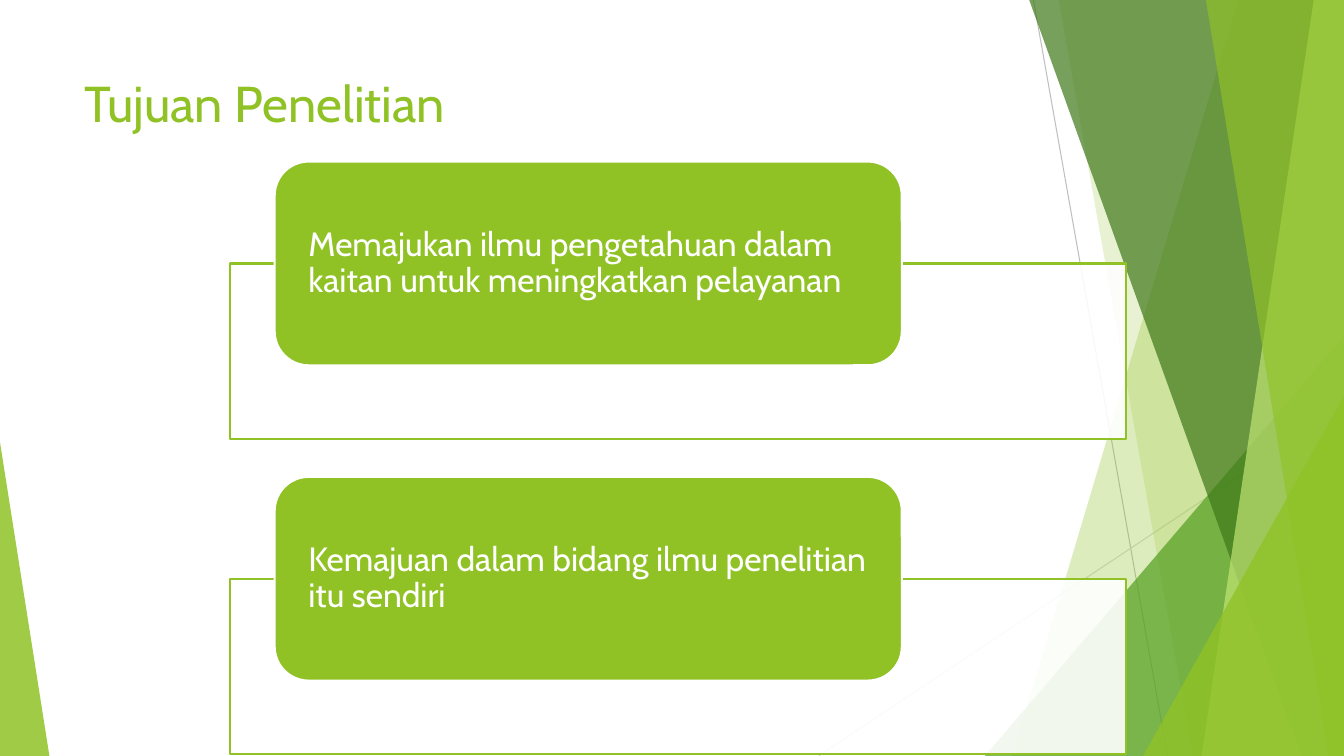
import dataclasses

import lxml.etree
import pptx
import pptx.dml.color
import pptx.enum.shapes
import pptx.enum.text
import pptx.oxml.ns
import pptx.util

Pt = pptx.util.Pt
SHAPES = pptx.enum.shapes.MSO_SHAPE
ANCHOR = pptx.enum.text.MSO_ANCHOR
ALIGN = pptx.enum.text.PP_ALIGN


@dataclasses.dataclass(frozen=True)
class Theme:
    font: str = "Cabin"
    title_size: float = 36
    goal_size: float = 24
    lime: str = "90C226"
    green: str = "54A021"
    forest: str = "3F7819"
    pale: str = "C0E474"
    white: str = "FFFFFF"
    ray: str = "BFBFBF"
    faint_ray: str = "D9D9D9"


@dataclasses.dataclass(frozen=True)
class Box:
    left: float
    top: float
    width: float
    height: float

    @property
    def right(self):
        return self.left + self.width

    @property
    def bottom(self):
        return self.top + self.height


THEME = Theme()


def rgb(color):
    return pptx.dml.color.RGBColor.from_string(color)


def apply(target, values):
    for name, value in values.items():
        setattr(target, name, value)


def place(shape, box):
    apply(shape, {name: Pt(value) for name, value in dataclasses.asdict(box).items()})


def paint(shape, fill, opacity=100, line=None):
    shape.shadow.inherit = False
    shape.fill.solid()
    shape.fill.fore_color.rgb = rgb(fill)
    if opacity < 100:
        tint = shape.element.spPr.find(".//" + pptx.oxml.ns.qn("a:srgbClr"))
        alpha = lxml.etree.SubElement(tint, pptx.oxml.ns.qn("a:alpha"))
        alpha.set("val", str(opacity * 1000))
    if line:
        shape.line.color.rgb = rgb(line)
        shape.line.width = Pt(1.5)
    else:
        shape.line.fill.background()


def add_block(page, kind, box, **look):
    block = page.shapes.add_shape(
        kind, Pt(box.left), Pt(box.top), Pt(box.width), Pt(box.height))
    paint(block, **look)
    return block


def write(frame, text, size, color, frame_format, para_format):
    apply(frame, {"word_wrap": True, **frame_format})
    para = frame.paragraphs[0]
    apply(para, {"alignment": ALIGN.LEFT, **para_format})
    span = para.add_run()
    span.text = text
    apply(span.font, {"name": THEME.font, "size": Pt(size)})
    span.font.color.rgb = rgb(color)


def add_ray(page, start, end, color):
    ray = page.shapes.add_connector(
        pptx.enum.shapes.MSO_CONNECTOR.STRAIGHT, *map(Pt, start + end))
    ray.line.color.rgb = rgb(color)
    ray.line.width = Pt(0.75)
    lxml.etree.SubElement(ray.element.spPr, pptx.oxml.ns.qn("a:effectLst"))


def add_band(page, box, top_offset, bottom_offset, color, opacity):
    builder = page.shapes.build_freeform(
        Pt(box.left + top_offset), Pt(box.top), scale=1.0)
    corners = [(box.right, box.top), (box.right, box.bottom),
               (box.left + bottom_offset, box.bottom)]
    builder.add_line_segments([(Pt(x), Pt(y)) for x, y in corners], close=True)
    paint(builder.convert_to_shape(), color, opacity)


def add_corner(page, box, width, height, apex, color, opacity):
    left = box.right - width if apex else box.left
    corner = add_block(page, SHAPES.ISOSCELES_TRIANGLE,
                       Box(left, box.bottom - height, width, height),
                       fill=color, opacity=opacity)
    corner.adjustments[0] = apex


def draw_facets(page, box):
    add_ray(page, (box.left + 35, box.top), (box.left + 130.8, box.bottom), THEME.ray)
    add_ray(page, (box.right, box.top + 290.2), (box.left - 118.4, box.bottom),
            THEME.faint_ray)
    add_band(page, box, 181.2, 20, THEME.lime, 30)
    add_band(page, box, 53, 148.8, THEME.lime, 20)
    add_corner(page, box, 256.5, 300, 1, THEME.green, 72)
    add_band(page, box, 32, 226.5, THEME.forest, 70)
    add_band(page, box, 235.2, 155.2, THEME.pale, 70)
    add_band(page, box, 158.2, 246, THEME.lime, 65)
    add_corner(page, box, 143.5, 257, 1, THEME.lime, 80)


def draw_left_wedge(page, box):
    add_corner(page, box, box.width, box.height, 0, THEME.lime, 85)


def draw_title(page, box, text):
    title = page.shapes.title
    place(title, box)
    write(title.text_frame, text, THEME.title_size, THEME.lime,
          {"vertical_anchor": ANCHOR.TOP,
           "auto_size": pptx.enum.text.MSO_AUTO_SIZE.NONE}, {})


def draw_goal(page, box, text):
    overlap = 72.8
    add_block(page, SHAPES.RECTANGLE,
              Box(box.left, box.top + overlap, box.width, box.height - overlap),
              fill=THEME.white, opacity=90, line=THEME.lime)
    card = add_block(page, SHAPES.ROUNDED_RECTANGLE,
                     Box(box.left + box.width * 0.05, box.top,
                         box.width * 0.7, overlap * 2),
                     fill=THEME.lime, line=THEME.white)
    write(card.text_frame, text, THEME.goal_size, THEME.white,
          {"vertical_anchor": ANCHOR.MIDDLE, "margin_left": Pt(17),
           "margin_right": Pt(17), "margin_top": 0, "margin_bottom": 0},
          {"line_spacing": 0.9})


def draw_goals(page, box, goals, gap):
    height = (box.height - gap * (len(goals) - 1)) / len(goals)
    for index, goal in enumerate(goals):
        top = box.top + index * (height + gap)
        draw_goal(page, Box(box.left, top, box.width, height), goal)


def main():
    deck = pptx.Presentation()
    apply(deck, {"slide_width": Pt(960), "slide_height": Pt(540)})
    page = deck.slides.add_slide(deck.slide_layouts.get_by_name("Title Only"))
    draw_facets(page, Box(703.2, 0, 256.8, 540))
    draw_left_wedge(page, Box(0, 316, 35.3, 224))
    draw_title(page, Box(53.3, 48, 676.8, 104), "Tujuan Penelitian")
    draw_goals(page, Box(164.2, 115.4, 640, 423.2), [
        "Memajukan ilmu pengetahuan dalam kaitan untuk meningkatkan pelayanan",
        "Kemajuan dalam bidang ilmu penelitian itu sendiri",
    ], gap=27.2)
    deck.save("out.pptx")


if __name__ == "__main__":
    main()
